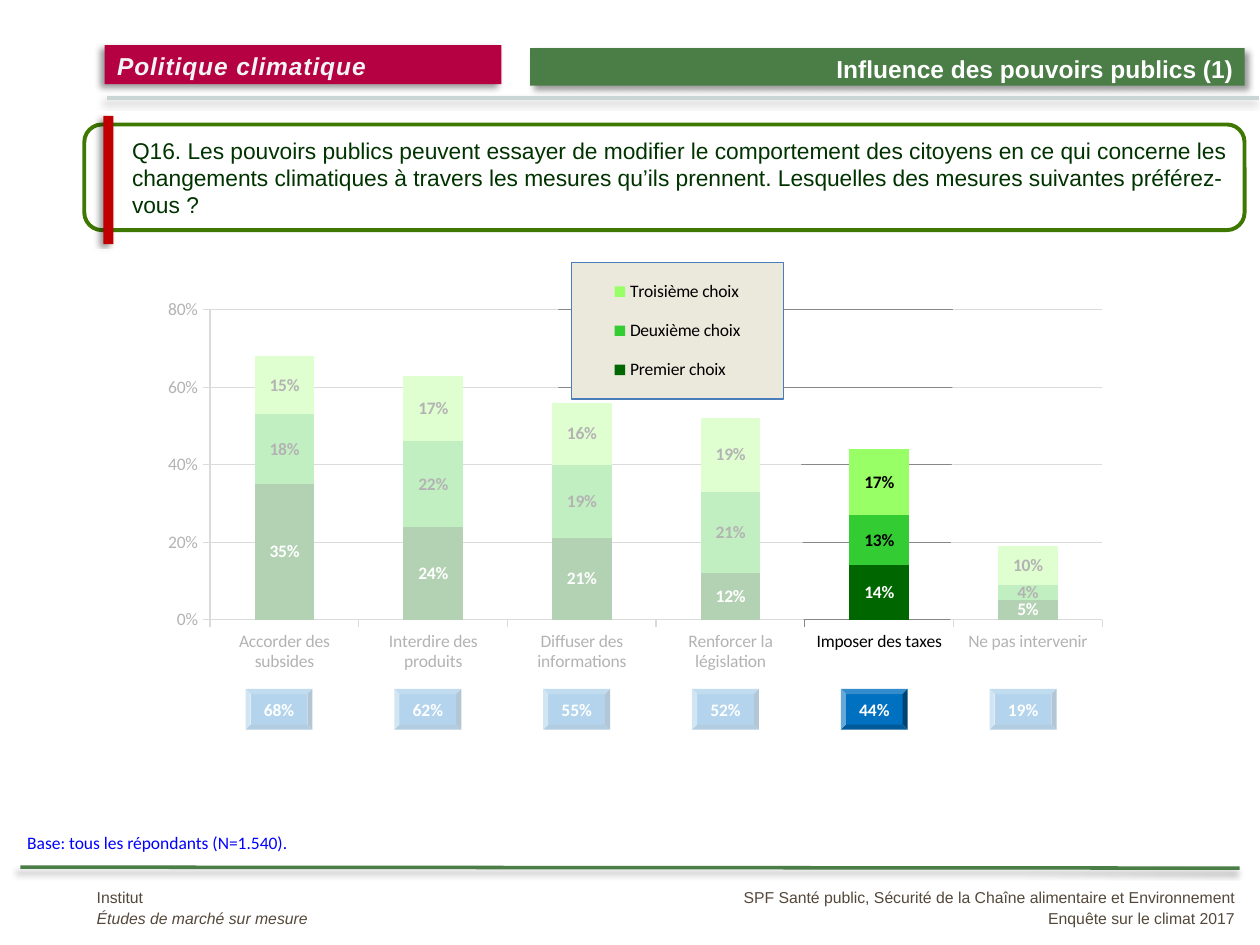
from dataclasses import dataclass

from lxml import etree
from pptx import Presentation
from pptx.chart.data import CategoryChartData
from pptx.dml.color import RGBColor
from pptx.enum.chart import XL_CHART_TYPE, XL_LABEL_POSITION, XL_LEGEND_POSITION, XL_TICK_MARK
from pptx.enum.shapes import MSO_CONNECTOR, MSO_SHAPE
from pptx.enum.text import MSO_ANCHOR, PP_ALIGN
from pptx.oxml import parse_xml
from pptx.oxml.ns import nsdecls, qn
from pptx.util import Cm, Pt

RECT, ROUNDED, BEVEL = MSO_SHAPE.RECTANGLE, MSO_SHAPE.ROUNDED_RECTANGLE, MSO_SHAPE.BEVEL
LEFT, CENTER, RIGHT = PP_ALIGN.LEFT, PP_ALIGN.CENTER, PP_ALIGN.RIGHT
TOP, MIDDLE = MSO_ANCHOR.TOP, MSO_ANCHOR.MIDDLE

WHITE = RGBColor(0xFF, 0xFF, 0xFF)
BLACK = RGBColor(0, 0, 0)
GREEN = RGBColor(0x4B, 0x7D, 0x47)
PALE = RGBColor(0xCA, 0xD6, 0xD4)
CRIMSON = RGBColor(0xB5, 0x00, 0x42)
OFF_WHITE = RGBColor(0xF2, 0xF4, 0xF3)
RED = RGBColor(0xC0, 0x00, 0x00)
BROWN = RGBColor(0x54, 0x48, 0x3A)
BLUE = RGBColor(0x00, 0x00, 0xFF)
BADGE_BLUE = RGBColor(0x00, 0x70, 0xC0)
FRAME_GREEN = RGBColor(0x3E, 0x78, 0x00)
DARK_GREEN = RGBColor(0x00, 0x33, 0x00)
AXIS_GREY = RGBColor(0x87, 0x87, 0x87)

QUESTION = (
    "Q16. Les pouvoirs publics peuvent essayer de modifier le comportement des citoyens "
    "en ce qui concerne les changements climatiques à travers les mesures qu’ils prennent. "
    "Lesquelles des mesures suivantes préférez-vous ?"
)


@dataclass
class Box:
    """Position and size in centimetres."""
    x: float
    y: float
    w: float
    h: float

    def emu(self):
        return Cm(self.x), Cm(self.y), Cm(self.w), Cm(self.h)


@dataclass
class Style:
    size: float
    color: RGBColor
    font: str = "Arial"
    bold: bool = False
    align: PP_ALIGN = LEFT
    anchor: MSO_ANCHOR = TOP
    spacing: float = 1.0


@dataclass
class Series:
    name: str
    values: tuple
    color: RGBColor
    label_color: RGBColor


CATEGORIES = ("Accorder des subsides", "Interdire des produits", "Diffuser des informations",
              "Renforcer la législation", "Imposer des taxes", "Ne pas intervenir")
TOTALS = ("68%", "62%", "55%", "52%", "44%", "19%")
SERIES = (
    Series("Premier choix", (0.35, 0.24, 0.21, 0.12, 0.14, 0.05), RGBColor(0x00, 0x66, 0x00), WHITE),
    Series("Deuxième choix", (0.18, 0.22, 0.19, 0.21, 0.13, 0.04), RGBColor(0x33, 0xCC, 0x33), BLACK),
    Series("Troisième choix", (0.15, 0.17, 0.16, 0.19, 0.17, 0.10), RGBColor(0x99, 0xFF, 0x66), BLACK),
)


def add_shadow(sp, degrees: int) -> None:
    for old in sp._element.spPr.findall(qn("a:effectLst")):
        sp._element.spPr.remove(old)
    sp._element.spPr.append(parse_xml(
        f'<a:effectLst {nsdecls("a")}><a:outerShdw blurRad="{Pt(4)}" dist="{Pt(3)}" '
        f'dir="{degrees * 60000}" algn="tl" rotWithShape="0"><a:srgbClr val="000000">'
        '<a:alpha val="40000"/></a:srgbClr></a:outerShdw></a:effectLst>'))


def add_rule(s, x1: float, y1: float, x2: float, y2: float, color: RGBColor) -> None:
    line = s.shapes.add_connector(MSO_CONNECTOR.STRAIGHT, Cm(x1), Cm(y1), Cm(x2), Cm(y2))
    line.line.color.rgb = color
    line.line.width = Pt(2)
    add_shadow(line, 135)


def add_block(s, kind: MSO_SHAPE, box: Box, fill: RGBColor):
    sp = s.shapes.add_shape(kind, *box.emu())
    sp.shadow.inherit = False
    sp.fill.solid()
    sp.fill.fore_color.rgb = fill
    sp.line.fill.background()
    return sp


def write(sp, style: Style, *lines: str):
    tf = sp.text_frame
    tf.word_wrap = True
    tf.vertical_anchor = style.anchor
    for i, line in enumerate(lines):
        p = tf.add_paragraph() if i else tf.paragraphs[0]
        p.text = line
        p.alignment = style.align
        p.line_spacing = style.spacing
        p.font.size, p.font.name = Pt(style.size), style.font
        p.font.bold, p.font.color.rgb = style.bold, style.color
    return tf


def add_text(s, box: Box, style: Style, *lines: str):
    return write(s.shapes.add_textbox(*box.emu()), style, *lines)


def set_layout(parent, index: int, x: float, y: float, w: float, h: float, target: str = "") -> None:
    for old in parent.findall(qn("c:layout")):
        parent.remove(old)
    layout = etree.Element(qn("c:layout"))
    manual = etree.SubElement(layout, qn("c:manualLayout"))
    fields = [("layoutTarget", target)] if target else []
    fields += [("xMode", "edge"), ("yMode", "edge"), ("x", x), ("y", y), ("w", w), ("h", h)]
    for tag, value in fields:
        etree.SubElement(manual, qn(f"c:{tag}")).set("val", str(value))
    parent.insert(index, layout)


def add_choice_chart(s, box: Box) -> None:
    data = CategoryChartData(number_format="0%")
    data.categories = CATEGORIES
    for series in SERIES:
        data.add_series(series.name, series.values)
    chart = s.shapes.add_chart(XL_CHART_TYPE.COLUMN_STACKED, *box.emu(), data).chart
    chart.font.size, chart.font.name, chart.font.color.rgb = Pt(10), "Calibri", BLACK
    chart.has_title = False
    plot = chart.plots[0]
    plot.gap_width, plot.overlap, plot.vary_by_categories = 150, 100, False
    for drawn, series in zip(plot.series, SERIES):
        drawn.format.fill.solid()
        drawn.format.fill.fore_color.rgb = series.color
        labels = drawn.data_labels
        labels.show_value = True
        labels.number_format, labels.number_format_is_linked = "0%", False
        labels.position = XL_LABEL_POSITION.CENTER
        labels.font.size, labels.font.bold = Pt(10), True
        labels.font.color.rgb = series.label_color

    # Axes
    values = chart.value_axis
    values.minimum_scale, values.maximum_scale, values.major_unit = 0, 0.8, 0.2
    values.tick_labels.number_format = "0%"
    values.tick_labels.number_format_is_linked = False
    for axis in (values, chart.category_axis):
        axis.major_tick_mark = XL_TICK_MARK.OUTSIDE
    for part in (values, chart.category_axis, values.major_gridlines):
        part.format.line.color.rgb = AXIS_GREY
        part.format.line.width = Pt(0.75)
    set_layout(chart._chartSpace.chart.plotArea, 0, 0.09, 0.11, 0.84, 0.59, "inner")

    # Legend
    chart.has_legend = True
    legend = chart.legend
    legend.position, legend.include_in_layout = XL_LEGEND_POSITION.RIGHT, False
    legend.font.size = Pt(10)
    set_layout(legend._element, 1, 0.43, 0.02, 0.2, 0.26)
    legend._element.find(qn("c:txPr")).addprevious(parse_xml(
        f'<c:spPr {nsdecls("c", "a")}><a:solidFill><a:srgbClr val="EBE9DC"/></a:solidFill>'
        '<a:ln w="9525"><a:solidFill><a:srgbClr val="4A7EBB"/></a:solidFill></a:ln></c:spPr>'))


def add_veil(s) -> None:
    """Translucent white sheet with an opening around the highlighted column."""
    opening = [(16.23, 15.11), (16.13, 8.13), (11.25, 8.1), (11.25, 5.16), (19.23, 5.18), (19.15, 15.14)]
    sheet = [(0.3, 5.03), (25.07, 5), (25.04, 15.85), (0.25, 15.75)]
    points = [[(Cm(x), Cm(y)) for x, y in outline] for outline in (opening, sheet)]
    builder = s.shapes.build_freeform(*points[0][0])
    builder.add_line_segments(points[0][1:])
    builder.move_to(*points[1][0])
    builder.add_line_segments(points[1][1:])
    sp = builder.convert_to_shape()
    sp.shadow.inherit = False
    sp.fill.solid()
    sp.fill.fore_color.rgb = WHITE
    color = sp._element.spPr.find(qn("a:solidFill"))[0]
    etree.SubElement(color, qn("a:alpha")).set("val", "70000")
    sp.line.color.rgb, sp.line.width = WHITE, Pt(0.25)


def main() -> None:
    prs = Presentation()
    prs.slide_width, prs.slide_height = Cm(25.4), Cm(19.05)
    s = prs.slides.add_slide(prs.slide_layouts[6])

    # Rules and footer
    add_rule(s, 0.41, 17.48, 24.99, 17.5, GREEN)
    add_rule(s, 2.16, 1.98, 25.37, 1.98, PALE)
    add_text(s, Box(11.91, 17.73, 13.23, 1.09), Style(9, BROWN, align=RIGHT, spacing=1.1),
             "SPF Santé public, Sécurité de la Chaîne alimentaire et Environnement",
             "Enquête sur le climat 2017")
    tf = add_text(s, Box(1.7, 17.73, 7.8, 1.09), Style(9, BROWN, spacing=1.1),
                  "Institut", "Études de marché sur mesure")
    tf.paragraphs[1].font.italic = True

    # Header
    add_shadow(add_block(s, RECT, Box(10.69, 0.97, 14.4, 0.76), GREEN), 45)
    add_text(s, Box(15.09, 0.97, 10.03, 0.74), Style(14, WHITE, bold=True, align=RIGHT),
             "Influence des pouvoirs publics (1)")
    sp = add_block(s, RECT, Box(2.11, 0.91, 8, 0.79), CRIMSON)
    add_shadow(sp, 135)
    p = write(sp, Style(14, OFF_WHITE, bold=True), "Politique climatique").paragraphs[0]
    p.font.italic = True
    p.runs[0].font._element.set("spc", "50")

    # Base and totals under the columns
    add_text(s, Box(0.3, 16.64, 10.01, 0.69), Style(10, BLUE, "Calibri"),
             "Base: tous les répondants (N=1.540).")
    for i, total in enumerate(TOTALS):
        sp = add_block(s, BEVEL, Box(4.95 + 3 * i, 13.89, 1.35, 0.82), BADGE_BLUE)
        tf = write(sp, Style(10, WHITE, "Calibri", True, CENTER, MIDDLE), total)
        tf.margin_left = tf.margin_right = tf.margin_top = tf.margin_bottom = 0

    # Question
    sp = add_block(s, ROUNDED, Box(1.7, 2.51, 23.39, 2.13), WHITE)
    sp.line.color.rgb, sp.line.width = FRAME_GREEN, Pt(2.25)
    p = write(sp, Style(13, DARK_GREEN, anchor=MIDDLE), QUESTION).paragraphs[0]
    p._p.get_or_add_pPr().set("marL", str(Cm(0.61)))
    sp = add_block(s, RECT, Box(0.89, 3.53, 2.59, 0.2), RED)
    sp.rotation = 90
    add_shadow(sp, 135)

    add_choice_chart(s, Box(2.31, 5.08, 21.41, 10.59))
    add_veil(s)
    prs.save("out.pptx")


if __name__ == "__main__":
    main()
